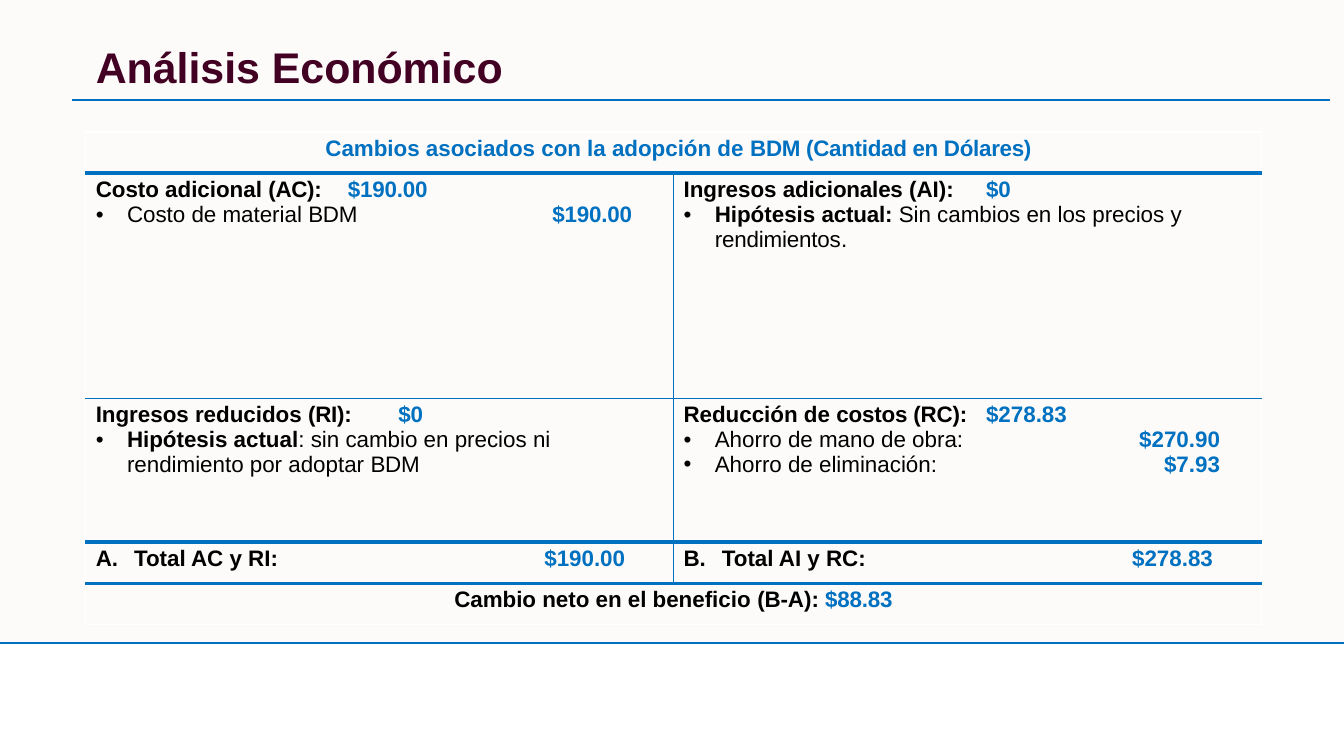
from dataclasses import dataclass

from lxml import etree
from pptx import Presentation
from pptx import util as u
from pptx.dml.color import RGBColor
from pptx.enum import shapes, text
from pptx.oxml import ns

BLUE, BLACK, WHITE = "0070C0", "000000", "FFFFFF"
PLUM, CREAM = "420023", "FDFBF9"
FONT = "Arial"


@dataclass(frozen=True)
class Piece:
    words: str
    color: str = BLACK
    bold: bool = True
    tracking: float = 0


@dataclass(frozen=True)
class Line:
    pieces: tuple[Piece, ...]
    bullet: str = ""
    number: int = 0
    indent: float = 0
    hanging: bool = True
    tab: tuple[float, str] = (5.51, "r")
    centered: bool = False


@dataclass(frozen=True)
class Edge:
    color: str
    points: float


@dataclass(frozen=True)
class Rule:
    left: float
    right: float
    y: float


OUTER, THIN, THICK = Edge(WHITE, 1), Edge(BLUE, 0.75), Edge(BLUE, 3)
EARLY_TAB = (3, "l")


def rgb(color: str) -> RGBColor:
    return RGBColor.from_string(color)


def add(parent, tag: str, **attributes: str):
    child = etree.SubElement(parent, ns.qn(tag))
    for key, value in attributes.items():
        child.set(key, value)
    return child


def amount(words: str, tracking: float = 0) -> Piece:
    return Piece(words, BLUE, True, tracking)


def item(*pieces: Piece) -> Line:
    return Line(pieces, bullet="•", indent=0.31)


def total(number: int, label: str, value: str) -> Line:
    return Line((Piece(label), Piece(":\t", tracking=-0.2), amount(value)),
                number=number, indent=0.38)


ROW_HEIGHTS = (0.41, 2.23, 1.43, 0.41, 0.41)
ROW_EDGES = (OUTER, THICK, THIN, THICK, THICK, OUTER)
BUDGET = (
    ((Line((amount("Cambios asociados con la adopción de "),
            amount("BDM (Cantidad en Dólares)", -0.2)),
           indent=0.1, hanging=False, centered=True),),),
    (
        (Line((Piece("Costo adicional "), Piece("(AC):\t", tracking=-0.2),
               amount("$190.00", -0.1)), tab=EARLY_TAB),
         item(Piece("Costo de material ", bold=False),
              Piece("BDM\t", bold=False, tracking=-0.2), amount("$190.00", -0.1))),
        (Line((Piece("Ingresos "), Piece("adicionales ", tracking=-0.1),
               Piece("(AI):"), amount("\t$0")), tab=EARLY_TAB),
         item(Piece("Hipótesis "), Piece("actual: ", tracking=-0.1),
              Piece("Sin cambios en los precios y", bold=False),
              Piece(" rendimientos", bold=False, tracking=-0.1),
              Piece(".", bold=False))),
    ),
    (
        (Line((Piece("Ingresos reducidos "), Piece("(RI):\t", tracking=-0.2),
               amount("$0"))),
         item(Piece("Hipótesis actual"), Piece(": sin cambio en precios ", bold=False),
              Piece("ni ", bold=False, tracking=-0.2),
              Piece("rendimiento por adoptar ", bold=False),
              Piece("BDM", bold=False, tracking=-0.2))),
        (Line((Piece("Reducción de "), Piece("costos (RC):", tracking=-0.1),
               amount("\t$278.83"))),
         item(Piece("Ahorro de mano de obra:\t", bold=False), amount("$270.90")),
         item(Piece("Ahorro de eliminación:\t", bold=False), amount("$7.93"))),
    ),
    ((total(1, "Total AC y RI", "$190.00"),), (total(2, "Total AI y RC", "$278.83"),)),
    ((Line((Piece("Cambio neto en el beneficio "), Piece("(B-", tracking=-0.1),
            Piece("A): "), amount("$88.83", -0.1)), centered=True),),),
)


def write_piece(paragraph, piece: Piece, size: float = 16) -> None:
    run = paragraph.add_run()
    run.text = piece.words
    run.font.name = FONT
    run.font.size = u.Pt(size)
    run.font.bold = piece.bold
    run.font.color.rgb = rgb(piece.color)
    if piece.tracking:
        run.font._element.set("spc", str(round(piece.tracking * 100)))


def write_line(paragraph, line: Line) -> None:
    properties = paragraph._p.get_or_add_pPr()
    indent = u.Inches(line.indent)
    properties.set("marL", str(indent))
    properties.set("indent", str(-indent if line.hanging else 0))
    if line.bullet or line.number:
        add(properties, "a:buFont", typeface=FONT)
    if line.bullet:
        add(properties, "a:buChar", char=line.bullet)
    elif line.number:
        add(properties, "a:buAutoNum", type="alphaUcPeriod", startAt=str(line.number))
    if not line.centered:
        position, side = line.tab
        add(add(properties, "a:tabLst"), "a:tab", pos=str(u.Inches(position)), algn=side)
    paragraph.alignment = text.PP_ALIGN.CENTER if line.centered else text.PP_ALIGN.LEFT
    for piece in line.pieces:
        write_piece(paragraph, piece)


def set_edges(cell, edges: dict[str, Edge]) -> None:
    properties = cell._tc.get_or_add_tcPr()
    for tag, edge in edges.items():
        border = add(properties, tag, w=str(u.Pt(edge.points)))
        add(add(border, "a:solidFill"), "a:srgbClr", val=edge.color)


def draw_rule(slide, rule: Rule) -> None:
    line = slide.shapes.add_connector(
        shapes.MSO_CONNECTOR.STRAIGHT, u.Inches(rule.left), u.Inches(rule.y),
        u.Inches(rule.right), u.Inches(rule.y))
    line.line.color.rgb = rgb(BLUE)
    line.line.width = u.Pt(1.5)
    add(line._element.spPr, "a:effectLst")


def draw_backdrop(slide) -> None:
    backdrop = slide.shapes.add_shape(
        shapes.MSO_SHAPE.RECTANGLE, 0, 0, u.Inches(13.33), u.Inches(6.38))
    backdrop.shadow.inherit = False
    backdrop.fill.solid()
    backdrop.fill.fore_color.rgb = rgb(CREAM)
    backdrop.line.fill.background()
    slide.shapes.title._element.addprevious(backdrop._element)


def draw_title(slide) -> None:
    title = slide.shapes.title
    title.left, title.top = u.Inches(0.85), u.Inches(0.4)
    title.width, title.height = u.Inches(12.34), u.Inches(0.59)
    frame = title.text_frame
    frame.vertical_anchor = text.MSO_ANCHOR.MIDDLE
    frame.auto_size = text.MSO_AUTO_SIZE.NONE
    heading = frame.paragraphs[0]
    heading.alignment = text.PP_ALIGN.LEFT
    heading.line_spacing = 0.9
    write_piece(heading, Piece("Análisis Económico", PLUM), 30.6)


def draw_budget(slide) -> None:
    budget = slide.shapes.add_table(
        len(BUDGET), 2, u.Inches(0.85), u.Inches(1.31),
        u.Inches(11.66), u.Inches(sum(ROW_HEIGHTS))).table
    budget.first_row = budget.horz_banding = False
    for row, (height, sections) in enumerate(zip(ROW_HEIGHTS, BUDGET)):
        budget.rows[row].height = u.Inches(height)
        spans = len(sections) == 1
        if spans:
            budget.cell(row, 0).merge(budget.cell(row, 1))
        for column in range(2):
            cell = budget.cell(row, column)
            middle = OUTER if spans else THIN
            set_edges(cell, {"a:lnL": middle if column else OUTER,
                             "a:lnR": OUTER if column else middle,
                             "a:lnT": ROW_EDGES[row], "a:lnB": ROW_EDGES[row + 1]})
            cell.fill.background()
            cell.margin_top = cell.margin_bottom = u.Inches(0.04)
        for column, lines in enumerate(sections):
            frame = budget.cell(row, column).text_frame
            for order, line in enumerate(lines):
                write_line(frame.add_paragraph() if order else frame.paragraphs[0], line)


def main() -> None:
    deck = Presentation()
    deck.slide_width, deck.slide_height = u.Inches(13.33), u.Inches(7.5)
    slide = deck.slides.add_slide(deck.slide_layouts[5])
    draw_backdrop(slide)
    for rule in (Rule(0, 13.33, 6.38), Rule(0.71, 13.19, 0.99)):
        draw_rule(slide, rule)
    draw_title(slide)
    draw_budget(slide)
    deck.save("out.pptx")


if __name__ == "__main__":
    main()
